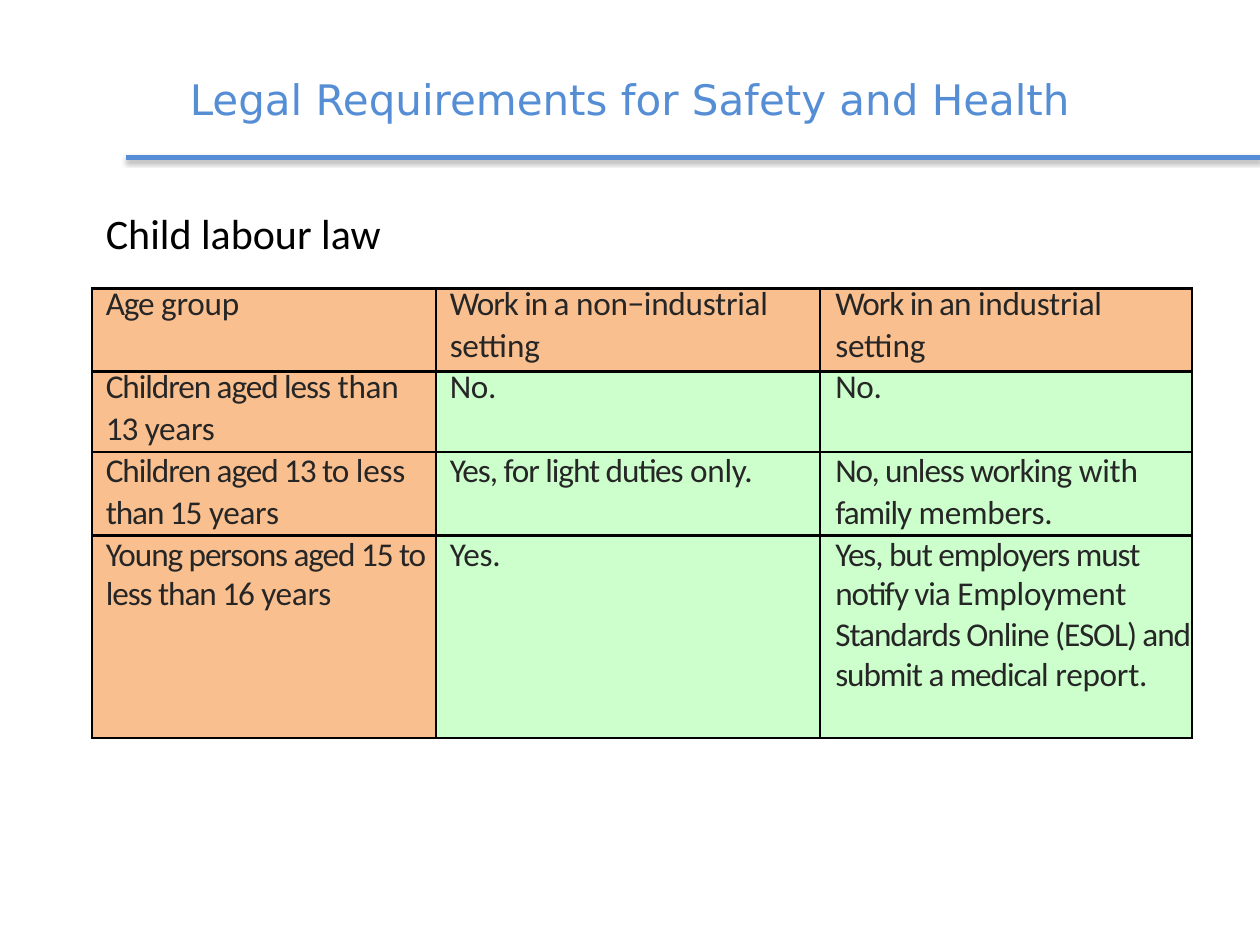
from pptx import Presentation
from pptx.dml.color import RGBColor
from pptx.enum.shapes import MSO_CONNECTOR
from pptx.enum.text import MSO_ANCHOR, PP_ALIGN
from pptx.oxml import parse_xml
from pptx.oxml.ns import nsdecls
from pptx.util import Inches, Pt

BLUE = RGBColor(0x55, 0x8E, 0xD5)
BLACK = RGBColor(0x00, 0x00, 0x00)
DARK_GREY = RGBColor(0x26, 0x26, 0x26)
ORANGE = RGBColor(0xFA, 0xBF, 0x8F)
GREEN = RGBColor(0xCC, 0xFF, 0xCC)

prs = Presentation()
prs.slide_width, prs.slide_height = Inches(10), Inches(7.5)
slide = prs.slides.add_slide(prs.slide_layouts[6])


def add_heading(text, left, top, width, height, font, color):
    box = slide.shapes.add_textbox(*map(Inches, (left, top, width, height)))
    frame = box.text_frame
    frame.word_wrap = True
    frame.margin_left = frame.margin_right = frame.margin_bottom = 0
    frame.margin_top = Inches(0.02)
    frame.text = text
    run_font = frame.paragraphs[0].runs[0].font
    run_font.name, run_font.size, run_font.color.rgb = font, Pt(24), color
    return frame


def add_words(paragraph, text, spacing):
    run = paragraph.add_run()
    run.text = text
    run.font.name, run.font.size = "Calibri", Pt(19)
    run.font.color.rgb = DARK_GREY
    run.font._element.set("spc", str(spacing))


# Rule under the title, with a soft shadow
rule = slide.shapes.add_connector(
    MSO_CONNECTOR.STRAIGHT, prs.slide_width // 10, prs.slide_height // 6,
    prs.slide_width, prs.slide_height // 6)
rule.line.color.rgb, rule.line.width = BLUE, Pt(2.5)
rule._element.spPr.append(parse_xml(
    f'<a:effectLst {nsdecls("a")}>'
    f'<a:outerShdw blurRad="{Pt(3.1)}" dist="{Pt(1.6)}" dir="5400000" rotWithShape="0">'
    '<a:srgbClr val="000000"><a:alpha val="38000"/></a:srgbClr>'
    '</a:outerShdw></a:effectLst>'))

# Subheading
add_heading("Child labour law", 0.84, 1.63, 2.4, 0.43, "Calibri", BLACK)

# Table: each cell is a list of paragraphs
law_rows = [
    [["Age group"],
     ["Work in a non−industrial", "setting"],
     ["Work in an industrial", "setting"]],
    [["Children aged less than", "13 years"], ["No."], ["No."]],
    [["Children aged 13 to less", "than 15 years"],
     ["Yes, for light duties only."],
     ["No, unless working with", "family members."]],
    [["Young persons aged 15 to less than 16 years"],
     ["Yes."],
     ["Yes, but employers must notify via Employment",
      "Standards Online (ESOL) and submit a medical report."]],
]
column_widths = [2.73, 3.05, 2.95]
row_heights = [0.66, 0.64, 0.66, 1.61]
line_pitches = [20.4, 20.4, 22.1, 22.2]
last_row = len(law_rows) - 1

law_table = slide.shapes.add_table(
    len(row_heights), len(column_widths), Inches(0.73), Inches(2.29),
    Inches(sum(column_widths)), Inches(sum(row_heights))).table
law_table.first_row = law_table.horz_banding = False
for column, width in zip(law_table.columns, column_widths):
    column.width = Inches(width)
for row, height in zip(law_table.rows, row_heights):
    row.height = Inches(height)

for r, law_row in enumerate(law_rows):
    for c, paragraphs in enumerate(law_row):
        cell = law_table.cell(r, c)
        cell.margin_left = Inches(0.12 if c == 2 else 0.11)
        cell.margin_right = cell.margin_bottom = 0
        cell.margin_top = Inches(0.01 if r == last_row else 0)
        cell.fill.solid()
        cell.fill.fore_color.rgb = ORANGE if r == 0 or c == 0 else GREEN

        # Words are set tight, except the last of each paragraph
        frame = cell.text_frame
        for i, text in enumerate(paragraphs):
            paragraph = frame.paragraphs[0] if i == 0 else frame.add_paragraph()
            if i == 0:
                paragraph.line_spacing = Pt(line_pitches[r])
            elif r < last_row:
                paragraph.space_before = Pt(0.9)
            else:
                paragraph.line_spacing = 1.01
            start, gap, last_word = text.rpartition(" ")
            if start:
                add_words(paragraph, start + gap, -60)
            add_words(paragraph, last_word, -15)

        # Borders, heavier around the header row
        weights = {"lnL": 1.5, "lnR": 1.5,
                   "lnT": 2.25 if r < 2 else 1.5,
                   "lnB": 2.25 if r == 0 else 1.5}
        for position, (side, weight) in enumerate(weights.items()):
            cell._tc.tcPr.insert(position, parse_xml(
                f'<a:{side} {nsdecls("a")} w="{Pt(weight)}"><a:solidFill>'
                f'<a:srgbClr val="{BLACK}"/></a:solidFill></a:{side}>'))

# Title
title = add_heading("Legal Requirements for Safety and Health",
                    0.5, 0.56, 9, 0.42, "DejaVu Sans", BLUE)
title.vertical_anchor = MSO_ANCHOR.MIDDLE
title.paragraphs[0].alignment = PP_ALIGN.CENTER

prs.save("out.pptx")
